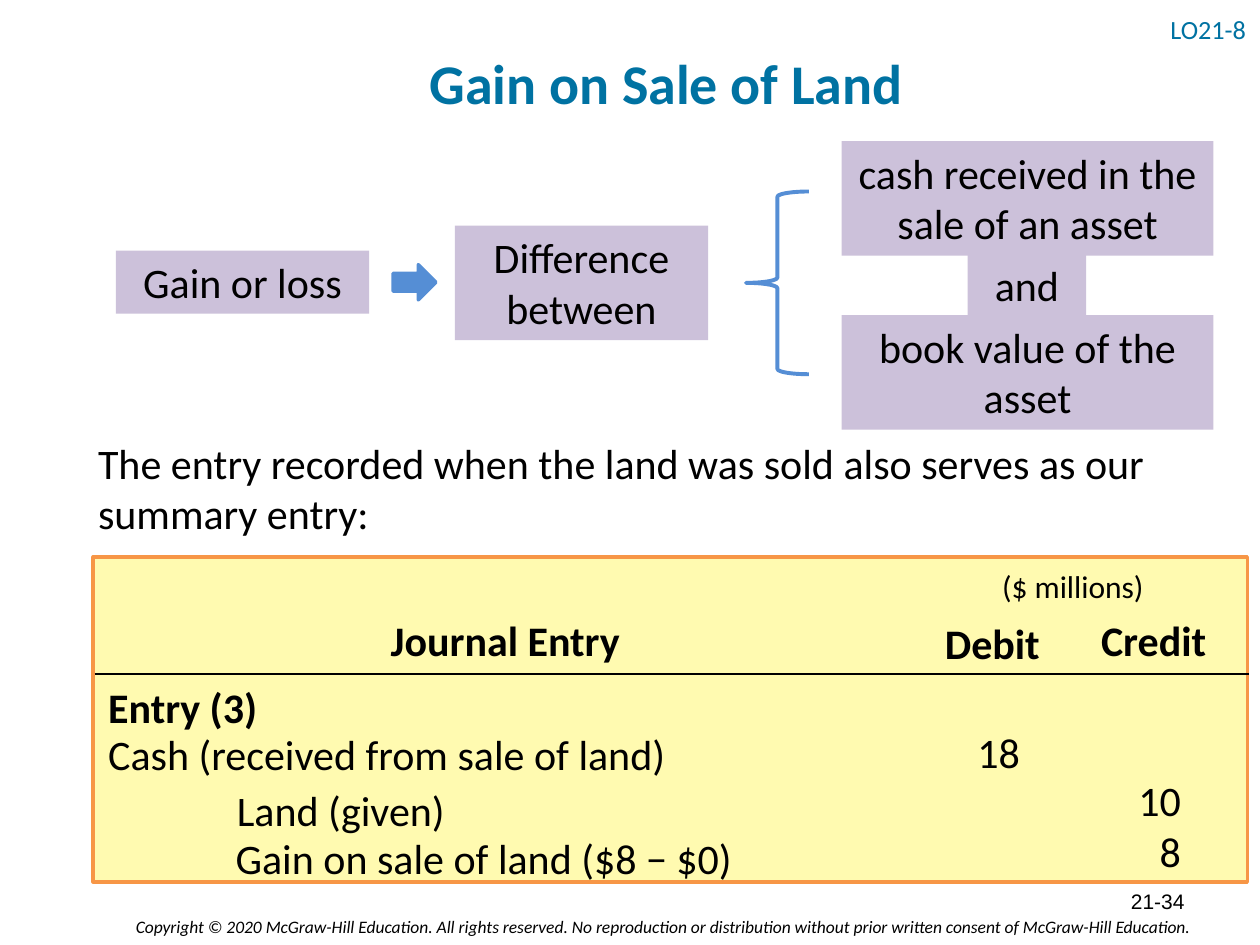
import pptx
import pptx.dml.color
import pptx.enum.shapes
import pptx.enum.text
import pptx.oxml
import pptx.oxml.ns
import pptx.util

RGBColor = pptx.dml.color.RGBColor
ALIGN = pptx.enum.text.PP_ALIGN
ANCHOR = pptx.enum.text.MSO_ANCHOR
SHAPE = pptx.enum.shapes.MSO_SHAPE

BLACK = RGBColor(0x00, 0x00, 0x00)
TEAL = RGBColor(0x00, 0x72, 0xA2)
LILAC = RGBColor(0xCC, 0xC1, 0xDA)
BLUE = RGBColor(0x55, 0x8E, 0xD5)
CREAM = RGBColor(0xFF, 0xFA, 0xB0)
ORANGE = RGBColor(0xF7, 0x96, 0x46)

COLUMNS, ROWS = 100, 75
SLIDE_WIDTH, SLIDE_HEIGHT = pptx.util.Inches(10), pptx.util.Inches(7.5)
LINE_HEIGHT = 5


def grid(column, row, columns, rows):
    """Turn grid columns and rows into left, top, width and height."""
    x_unit, y_unit = SLIDE_WIDTH / COLUMNS, SLIDE_HEIGHT / ROWS
    return (round(column * x_unit), round(row * y_unit),
            round(columns * x_unit), round(rows * y_unit))


def write(shape, text, size=24, color=BLACK, bold=False, italic=False, align=ALIGN.LEFT,
          anchor=ANCHOR.TOP, spacing=None, font="Calibri", indent=1):
    """Put one formatted paragraph into a shape."""
    frame = shape.text_frame
    frame.text = text
    frame.word_wrap = True
    frame.vertical_anchor = anchor
    frame.margin_left = round(indent * SLIDE_WIDTH / COLUMNS)
    paragraph = frame.paragraphs[0]
    paragraph.alignment = align
    paragraph.line_spacing = spacing
    run_font = paragraph.runs[0].font
    run_font.name, run_font.size = font, pptx.util.Pt(size)
    run_font.bold, run_font.italic = bold, italic
    run_font.color.rgb = color


def add_title(slide, text, place):
    """Move the title placeholder and format it."""
    title = slide.shapes.title
    title.left, title.top, title.width, title.height = grid(*place)
    write(title, text, 32, TEAL, bold=True, align=ALIGN.CENTER, anchor=ANCHOR.MIDDLE, spacing=1.1)


def add_text(slide, text, place, **style):
    """Add a text box and return it."""
    box = slide.shapes.add_textbox(*grid(*place))
    write(box, text, **style)
    return box


def add_shape(slide, kind, place, fill=None, line=None, weight=2):
    """Add a flat preset shape with an optional fill and outline."""
    shape = slide.shapes.add_shape(kind, *grid(*place))
    shape.shadow.inherit = False
    if fill is None:
        shape.fill.background()
    else:
        shape.fill.solid()
        shape.fill.fore_color.rgb = fill
    if line is None:
        shape.line.fill.background()
    else:
        shape.line.color.rgb = line
        shape.line.width = pptx.util.Pt(weight)
    return shape


def add_label(slide, text, place):
    """Add a lilac box with centred text."""
    write(add_shape(slide, SHAPE.RECTANGLE, place, LILAC), text, align=ALIGN.CENTER)


def add_rule(slide, column, row, columns):
    """Add a thin black horizontal line."""
    left, top, width, _ = grid(column, row, columns, 0)
    rule = slide.shapes.add_connector(
        pptx.enum.shapes.MSO_CONNECTOR.STRAIGHT, left, top, left + width, top)
    rule.line.color.rgb = BLACK
    rule.line.width = pptx.util.Pt(0.75)
    properties = rule._element.spPr
    properties.append(pptx.oxml.parse_xml(
        "<a:effectLst %s/>" % pptx.oxml.ns.nsdecls("a")))


def add_difference_diagram(slide):
    """Draw how a gain or loss is worked out."""
    labels = [
        ("Gain or loss", (9.2, 19.9, 20.1, LINE_HEIGHT)),
        ("Difference between", (36.1, 17.9, 20.1, 9.1)),
        ("cash received in the sale of an asset", (66.8, 11.2, 29.5, 9.1)),
        ("book value of the asset", (66.8, 25, 29.5, 9.1)),
        ("and", (76.8, 20.1, 9.4, LINE_HEIGHT)),
    ]
    for text, place in labels:
        add_label(slide, text, place)
    arrow = add_shape(slide, SHAPE.DOWN_ARROW, (31.5, 20.7, 2.8, 3.4), BLUE, BLUE)
    arrow.rotation = 270
    add_shape(slide, SHAPE.LEFT_BRACE, (59.2, 15.2, 5, 14.5), line=BLUE, weight=2.25)


def add_journal(slide):
    """Draw the journal entry panel with its headings, accounts and amounts."""
    add_shape(slide, SHAPE.RECTANGLE, (7.4, 44.2, 91.6, 25.8), CREAM, ORANGE)
    add_rule(slide, 7.5, 53.5, 91.6)
    add_text(slide, "($ millions)", (76.4, 44.5, 17.5, 4), size=18, align=ALIGN.CENTER)

    headings = [
        ("Journal Entry", 20.5, 48.3, 39.2, ALIGN.CENTER),
        ("Debit", 74, 48.5, 10.2, ALIGN.LEFT),
        ("Credit", 86.4, 48.3, 12.6, ALIGN.LEFT),
        ("Entry (3)", 7.6, 53.6, 49.1, ALIGN.LEFT),
    ]
    for text, column, row, columns, align in headings:
        add_text(slide, text, (column, row, columns, LINE_HEIGHT), bold=True, align=align)

    accounts = [
        ("Cash (received from sale of land)", 7.6, 57.3, 1),
        ("Land (given)", 7.8, 61.8, 11),
        ("Gain on sale of land ($8 − $0)", 7.7, 65.6, 11),
    ]
    for text, column, row, indent in accounts:
        add_text(slide, text, (column, row, 64.2, LINE_HEIGHT), indent=indent)

    add_text(slide, "18", (72.2, 57.2, 14.1, LINE_HEIGHT), align=ALIGN.CENTER)
    for amount, row in (("10", 61), ("8", 65)):
        add_text(slide, amount, (81, row, 13.7, LINE_HEIGHT), align=ALIGN.RIGHT)


def main():
    """Build the slide and save it."""
    presentation = pptx.Presentation()
    presentation.slide_width, presentation.slide_height = SLIDE_WIDTH, SLIDE_HEIGHT
    slide = presentation.slides.add_slide(presentation.slide_layouts[5])

    add_text(slide, "Copyright © 2020 McGraw-Hill Education. All rights reserved. No reproduction "
             "or distribution without prior written consent of McGraw-Hill Education.",
             (4.5, 72.2, 90.9, 2.7), size=10, italic=True, align=ALIGN.RIGHT)
    objective = add_text(slide, "LO21-8", (91.9, 0.5, 8.1, 4), size=15, color=TEAL,
                         anchor=ANCHOR.MIDDLE, spacing=0.9)
    objective.text_frame.margin_right = 0
    add_title(slide, "Gain on Sale of Land", (5.8, 0, 94.2, 12.5))
    add_difference_diagram(slide)
    add_text(slide, "The entry recorded when the land was sold also serves as our summary entry:",
             (6.8, 34.2, 92.4, 9.1))
    add_journal(slide)
    add_text(slide, "21-34", (71.7, 69.5, 23.3, 4), size=12, font="Arial",
             align=ALIGN.RIGHT, anchor=ANCHOR.MIDDLE)
    presentation.save("out.pptx")


if __name__ == "__main__":
    main()
